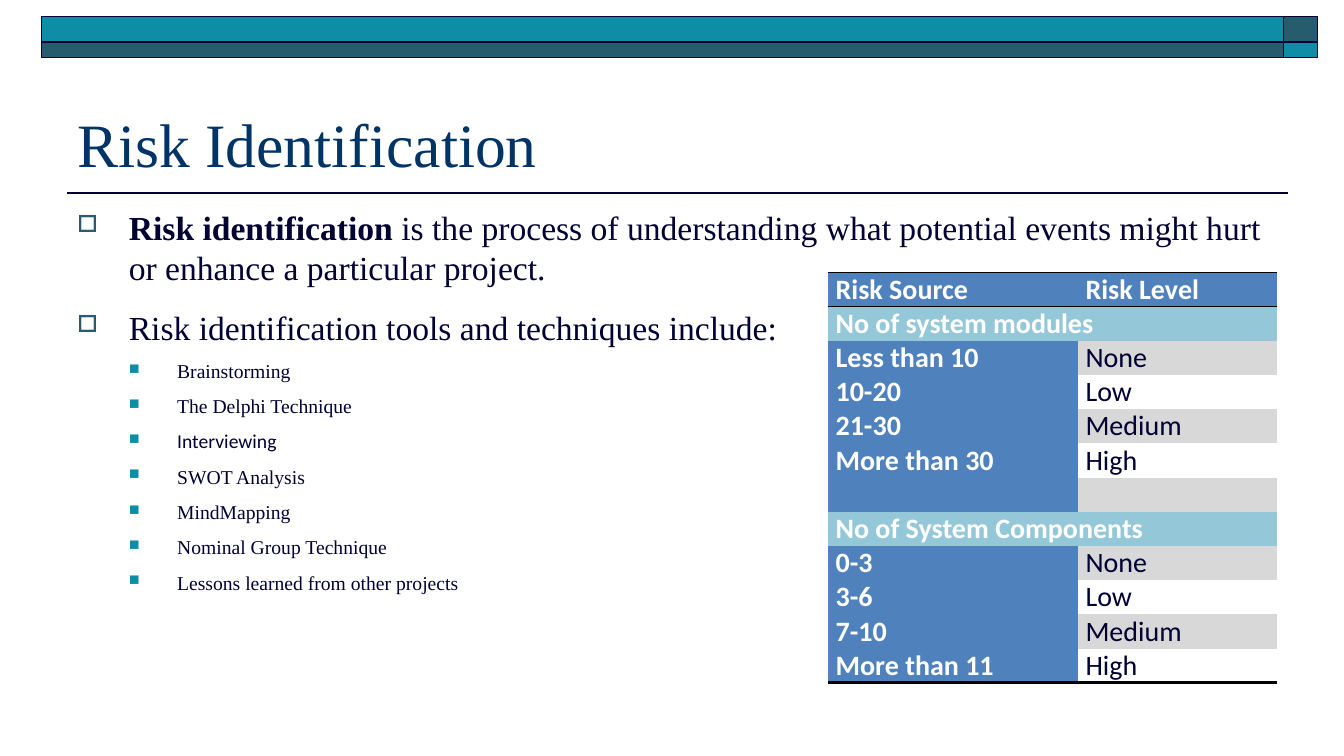
from lxml import etree
from pptx import Presentation
from pptx.dml.color import RGBColor
from pptx.enum import shapes, text
from pptx.oxml import ns
from pptx.util import Pt

NAVY = RGBColor(0x00, 0x00, 0x33)
TITLE = RGBColor(0x00, 0x33, 0x66)
TEAL = RGBColor(0x10, 0x8D, 0xA6)
DARK = RGBColor(0x27, 0x5C, 0x6D)
BLUE = RGBColor(0x4F, 0x81, 0xBD)
PALE = RGBColor(0x94, 0xC8, 0xD9)
GREY = RGBColor(0xD8, 0xD8, 0xD8)
WHITE = RGBColor(0xFF, 0xFF, 0xFF)
BLACK = RGBColor(0x00, 0x00, 0x00)
SERIF, SANS = "Times New Roman", "Calibri"
NO_GRID = "{2D5ABB26-0587-4C30-8999-92F81FD0307C}"

TOOLS = ["Brainstorming", "The Delphi Technique", "Interviewing",
         "SWOT Analysis", "MindMapping", "Nominal Group Technique",
         "Lessons learned from other projects"]
RISKS = [("Risk Source", "Risk Level"),
         ("No of system modules", None),
         ("Less than 10", "None"), ("10-20", "Low"),
         ("21-30", "Medium"), ("More than 30", "High"),
         ("", ""),
         ("No of System Components", None),
         ("0-3", "None"), ("3-6", "Low"),
         ("7-10", "Medium"), ("More than 11", "High")]


def node(parent, tag, **attrs):
    item = etree.SubElement(parent, ns.qn("a:" + tag))
    for key, val in attrs.items():
        item.set(key, str(val))
    return item


def add_run(para, words, size, color, font=SERIF, bold=False):
    run = para.add_run()
    run.text = words
    run.font.size = Pt(size)
    run.font.name = font
    run.font.bold = bold
    run.font.color.rgb = color


def add_bar(slide, left, top, width, height, color):
    bar = slide.shapes.add_shape(shapes.MSO_SHAPE.RECTANGLE, Pt(left), Pt(top),
                                 Pt(width), Pt(height))
    bar.shadow.inherit = False
    bar.fill.solid()
    bar.fill.fore_color.rgb = color
    bar.line.color.rgb = NAVY
    bar.line.width = Pt(1)


def add_rule(slide, left, right, top):
    rule = slide.shapes.add_connector(shapes.MSO_CONNECTOR.STRAIGHT, Pt(left),
                                      Pt(top), Pt(right), Pt(top))
    rule.line.color.rgb = NAVY
    rule.line.width = Pt(1)
    node(rule._element.spPr, "effectLst")


def add_box(slide, left, top, width, height, anchor):
    box = slide.shapes.add_textbox(Pt(left), Pt(top), Pt(width), Pt(height))
    frame = box.text_frame
    frame.word_wrap = True
    frame.vertical_anchor = anchor
    return frame


def set_bullet(para, mark, color, scale, left, hang, before):
    """Give a paragraph its bullet, hanging indent and space before."""
    para.space_before = Pt(before)
    props = para._p.get_or_add_pPr()
    props.set("marL", str(Pt(left)))
    props.set("indent", str(-Pt(hang)))
    node(node(props, "buClr"), "srgbClr", val=color)
    node(props, "buSzPct", val=scale * 1000)
    node(props, "buChar", char=mark)


def add_body(slide):
    frame = add_box(slide, 48, 144, 864, 338, text.MSO_ANCHOR.TOP)
    points = [[("Risk identification", True),
               (" is the process of understanding what potential events "
                "might hurt or enhance a particular project.", False)],
              [("Risk identification tools and techniques include:", False)]]
    for num, runs in enumerate(points):
        para = frame.add_paragraph() if num else frame.paragraphs[0]
        set_bullet(para, "□", DARK, 70, 37, 37, 14)
        for words, bold in runs:
            add_run(para, words, 24, NAVY, bold=bold)
    for tool in TOOLS:
        para = frame.add_paragraph()
        para.level = 1
        set_bullet(para, "■", TEAL, 75, 71.5, 34.5, 8.4)
        add_run(para, tool, 14, NAVY,
                SANS if tool == "Interviewing" else SERIF)


def set_edge(cell, tag, width):
    """Draw one border; call before the cell is filled."""
    edge = node(cell._tc.get_or_add_tcPr(), tag, w=Pt(width))
    node(node(edge, "solidFill"), "srgbClr", val=BLACK)


def fill_cell(cell, words, fill, color, bold):
    cell.margin_left = cell.margin_right = Pt(5.4)
    cell.margin_top = cell.margin_bottom = 0
    if fill is None:
        cell.fill.background()
    else:
        cell.fill.solid()
        cell.fill.fore_color.rgb = fill
    if words:
        add_run(cell.text_frame.paragraphs[0], words, 20, color, SANS, bold)


def add_risks(slide):
    count = len(RISKS)
    pitch = 24.45
    frame = slide.shapes.add_table(count, 2, Pt(591.5), Pt(194.5),
                                   Pt(320.5), Pt(count * pitch))
    table = frame.table
    table.first_row = table.horz_banding = False
    table._tbl.tblPr.find(ns.qn("a:tableStyleId")).text = NO_GRID
    for col, width in zip(table.columns, (178.5, 142)):
        col.width = Pt(width)
    for num, (source, level) in enumerate(RISKS):
        table.rows[num].height = Pt(pitch)
        left, right = table.cell(num, 0), table.cell(num, 1)
        for cell in (left, right):
            if num == 0:
                set_edge(cell, "lnT", 1)
                set_edge(cell, "lnB", 1)
            elif num == count - 1:
                set_edge(cell, "lnB", 2.25)
        if level is None:
            left.merge(right)
            fill_cell(left, source, PALE, WHITE, True)
            continue
        fill_cell(left, source, BLUE, WHITE, True)
        if num == 0:
            fill_cell(right, level, BLUE, WHITE, True)
        else:
            fill_cell(right, level, None if num % 2 else GREY, NAVY, False)


def main():
    deck = Presentation()
    deck.slide_width, deck.slide_height = Pt(960), Pt(540)
    slide = deck.slides.add_slide(deck.slide_layouts[6])
    add_rule(slide, 48, 920, 138)
    for top, height, wide, small in ((12, 18, TEAL, DARK),
                                     (30, 11, DARK, TEAL)):
        add_bar(slide, 29.5, top, 887.5, height, wide)
        add_bar(slide, 917, top, 24, height, small)
    title = add_box(slide, 48, 42, 864, 90, text.MSO_ANCHOR.BOTTOM)
    add_run(title.paragraphs[0], "Risk Identification", 44, TITLE)
    add_body(slide)
    add_risks(slide)
    deck.save("out.pptx")


if __name__ == "__main__":
    main()
